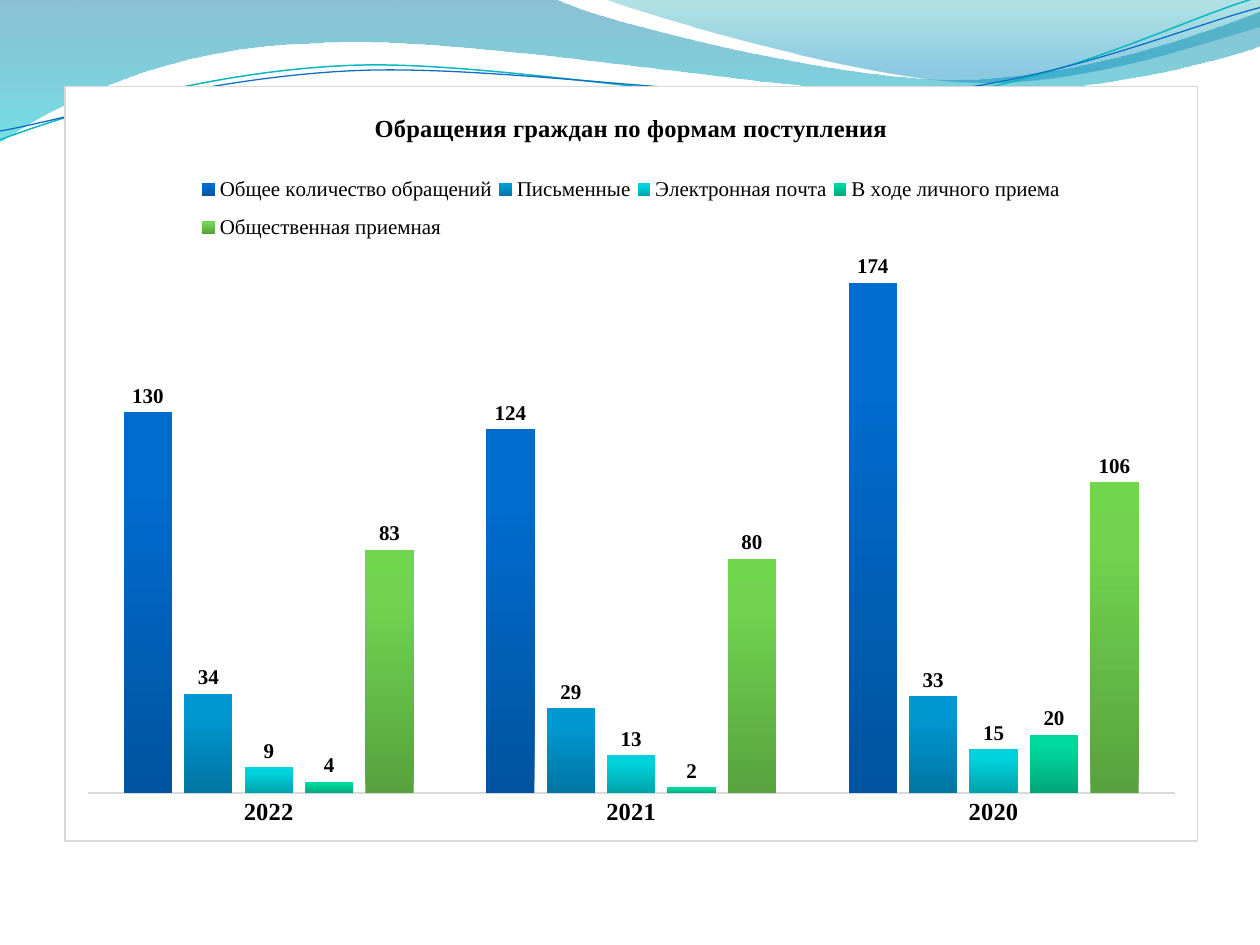
from math import cos, radians, sin

from lxml import etree
from pptx import Presentation
from pptx.chart.data import CategoryChartData
from pptx.dml.color import RGBColor
from pptx.enum.chart import XL_CHART_TYPE, XL_LABEL_POSITION, XL_LEGEND_POSITION, XL_TICK_MARK
from pptx.oxml import parse_xml
from pptx.oxml.ns import nsdecls, qn
from pptx.util import Inches, Pt

COLUMNS = XL_CHART_TYPE.COLUMN_CLUSTERED
LEGEND_TOP = XL_LEGEND_POSITION.TOP
LABEL_ABOVE = XL_LABEL_POSITION.OUTSIDE_END
NO_TICK = XL_TICK_MARK.NONE

BLACK = RGBColor(0x00, 0x00, 0x00)
WHITE = RGBColor(0xFF, 0xFF, 0xFF)
GREY = RGBColor(0xD9, 0xD9, 0xD9)
TEAL = RGBColor(0x0A, 0xB8, 0xBF)
BLUE = RGBColor(0x0F, 0x6F, 0xC6)
DEEP_BLUE = RGBColor(0x00, 0x74, 0xA1)
TURQUOISE = RGBColor(0x00, 0xC6, 0xCF)
SEA = RGBColor(0x00, 0xA1, 0xA9)
SKY = RGBColor(0x00, 0x8B, 0xBF)

TITLE = "Обращения граждан по формам поступления"
YEARS = ["2022", "2021", "2020"]
APPEALS = [
    ("Общее количество обращений", (130, 124, 174), ("00539F", "006CCE", "006DCF")),
    ("Письменные", (34, 29, 33), ("0075A2", "0098D2", "0099D3")),
    ("Электронная почта", (9, 13, 15), ("00A3AA", "00D3DD", "00D4DE")),
    ("В ходе личного приема", (4, 2, 20), ("00A679", "00D89D", "00D99E")),
    ("Общественная приемная", (83, 80, 106), ("57A23D", "71D350", "70D64E")),
]

TILT = 357.3
LEFT_WAVE = [
    (0, 0), (4.4, -0.01),
    (4.76, 0.17, 6.64, 0.63, 7.58, 0.63), (8.53, 0.63, 9.58, 0.26, 10, 0.09),
    (10.01, 0.36),
    (9.83, 0.44, 8.7, 0.76, 7.46, 0.75), (6.22, 0.75, 3.82, 0.28, 2.57, 0.34),
    (1.29, 0.36, 0.46, 0.83, -0.01, 1.13), (0, 0),
]
RIGHT_WAVE = [
    (4.79, -0.01),
    (5.09, 0.11, 6.82, 0.62, 7.69, 0.65), (8.56, 0.69, 9.61, 0.32, 10, 0.21),
    (10, 0), (4.79, -0.01),
]
TEAL_LINE = [
    (0, 1.11),
    (0.48, 0.93, 1.58, 0.57, 2.77, 0.52), (3.95, 0.47, 5.93, 0.89, 7.13, 0.8),
    (8.33, 0.71, 9.38, 0.15, 9.98, -0.02),
]
BLUE_LINE = [
    (0, 1.04),
    (0.47, 0.96, 1.64, 0.61, 2.83, 0.56), (4.03, 0.51, 5.97, 0.84, 7.17, 0.75),
    (8.36, 0.67, 9.41, 0.21, 10, 0.06),
]


def local_points(segment, box, rotation):
    left, top, width, height = box
    turn = radians(-rotation)
    for x, y in zip(segment[::2], segment[1::2]):
        dx, dy = x - left - width / 2, y - top - height / 2
        yield (Inches(width / 2 + dx * cos(turn) - dy * sin(turn)),
               Inches(height / 2 + dx * sin(turn) + dy * cos(turn)))


def apply_gradient(fill, owner, stops, angle):
    fill.gradient()
    gradient = next(owner.iter(qn("a:gradFill")))
    for child in list(gradient):
        gradient.remove(child)
    stop_list = etree.SubElement(gradient, qn("a:gsLst"))
    for position, color, opacity in stops:
        stop = etree.SubElement(stop_list, qn("a:gs"), pos=str(position * 1000))
        tone = etree.SubElement(stop, qn("a:srgbClr"), val=str(color))
        if opacity < 100:
            etree.SubElement(tone, qn("a:alpha"), val=str(opacity * 1000))
    etree.SubElement(gradient, qn("a:lin"), ang=str(angle * 60000), scaled="0")


def percent_layout(x, y, width, height, inner=False):
    target = '<c:layoutTarget val="inner"/>' if inner else ""
    return parse_xml(
        f'<c:layout {nsdecls("c")}><c:manualLayout>{target}'
        '<c:xMode val="edge"/><c:yMode val="edge"/>'
        f'<c:x val="{x / 100}"/><c:y val="{y / 100}"/>'
        f'<c:w val="{width / 100}"/><c:h val="{height / 100}"/>'
        '</c:manualLayout></c:layout>')


class SlideBuilder:
    font_name = "Times New Roman"
    base_font = "Vollkorn"

    def __init__(self, slide):
        self.slide = slide

    def style(self, font, size, bold=False):
        font.name = self.font_name
        font.size = Pt(size)
        font.bold = bold
        font.color.rgb = BLACK

    def outline(self, segments, box, close=False, rotation=0):
        builder = self.slide.shapes.build_freeform()
        builder.add_line_segments([(Inches(1), Inches(1))], close=close)
        shape = builder.convert_to_shape()
        shape.left, shape.top, shape.width, shape.height = map(Inches, box)
        shape.rotation = rotation
        shape.shadow.inherit = False
        track = next(shape.element.iter(qn("a:path")))
        track.set("w", str(shape.width))
        track.set("h", str(shape.height))
        for child in list(track):
            track.remove(child)
        for index, segment in enumerate(segments):
            tag = "a:cubicBezTo" if len(segment) == 6 else "a:lnTo"
            step = etree.SubElement(track, qn(tag if index else "a:moveTo"))
            for x, y in local_points(segment, box, rotation):
                etree.SubElement(step, qn("a:pt"), x=str(x), y=str(y))
        if close:
            etree.SubElement(track, qn("a:close"))
        return shape

    def wave(self, segments, box, stops):
        shape = self.outline(segments, box, close=True)
        apply_gradient(shape.fill, shape.element, stops, 90)
        shape.line.fill.background()

    def curve(self, segments, box, color, width):
        shape = self.outline(segments, box, rotation=TILT)
        shape.fill.background()
        shape.line.color.rgb = color
        shape.line.width = Pt(width)

    def column_chart(self, *box):
        data = CategoryChartData()
        data.categories = YEARS
        for name, values, _ in APPEALS:
            data.add_series(name, values)
        chart = self.slide.shapes.add_chart(COLUMNS, *map(Inches, box), data).chart
        chart.font.name = self.base_font
        chart.font.size = Pt(10)
        chart.font.color.rgb = BLACK
        self.frame(chart)
        self.heading(chart)
        self.legend(chart)
        self.axes(chart)
        self.columns(chart.plots[0])
        plot_area = next(chart.element.iter(qn("c:plotArea")))
        for layout in plot_area.findall(qn("c:layout")):
            plot_area.remove(layout)
        plot_area.insert(0, percent_layout(2, 23.7, 96, 70, inner=True))

    def frame(self, chart):
        chart.element.find(qn("c:chart")).addnext(parse_xml(
            f'<c:spPr {nsdecls("c", "a")}>'
            f'<a:solidFill><a:srgbClr val="{WHITE}"/></a:solidFill>'
            f'<a:ln w="{Pt(0.75)}"><a:solidFill><a:srgbClr val="{GREY}"/></a:solidFill></a:ln>'
            '</c:spPr>'))

    def heading(self, chart):
        chart.has_title = True
        run = chart.chart_title.text_frame.paragraphs[0].add_run()
        run.text = TITLE
        self.style(run.font, 14, bold=True)
        chart.chart_title.include_in_layout = False

    def legend(self, chart):
        chart.has_legend = True
        chart.legend.position = LEGEND_TOP
        chart.legend.include_in_layout = False
        self.style(chart.legend.font, 12)
        legend = next(chart.element.iter(qn("c:legend")))
        legend.find(qn("c:legendPos")).addnext(percent_layout(11.5, 10.2, 77, 12))

    def axes(self, chart):
        years = chart.category_axis
        years.major_tick_mark = NO_TICK
        years.minor_tick_mark = NO_TICK
        years.format.line.color.rgb = GREY
        years.format.line.width = Pt(1)
        self.style(years.tick_labels.font, 14, bold=True)
        counts = chart.value_axis
        counts.minimum_scale = 0
        counts.maximum_scale = 180
        counts.has_major_gridlines = False
        counts.visible = False

    def columns(self, plot):
        plot.gap_width = 150
        plot.overlap = -25
        plot.vary_by_categories = False
        for series, (_, _, colors) in zip(plot.series, APPEALS):
            stops = [(at, color, 100) for at, color in zip((0, 80, 100), colors)]
            apply_gradient(series.format.fill, series._element, stops, 270)
            labels = series.data_labels
            labels.show_value = True
            labels.position = LABEL_ABOVE
            self.style(labels.font, 12, bold=True)


def main():
    deck = Presentation()
    deck.slide_width = Inches(10)
    deck.slide_height = Inches(7.5)
    page = SlideBuilder(deck.slides.add_slide(deck.slide_layouts[6]))
    page.wave(LEFT_WAVE, (-0.01, -0.01, 10.02, 1.14),
              [(0, DEEP_BLUE, 45), (100, TURQUOISE, 55)])
    page.wave(RIGHT_WAVE, (4.79, -0.01, 5.21, 0.7), [(0, SEA, 30), (80, SKY, 45)])
    page.curve(TEAL_LINE, (-0.02, 0.22, 10.02, 0.71), TEAL, 0.85)
    page.curve(BLUE_LINE, (-0.02, 0.3, 10.03, 0.58), BLUE, 0.75)
    page.column_chart(0.51, 0.68, 9, 6)
    deck.save("out.pptx")


if __name__ == "__main__":
    main()
